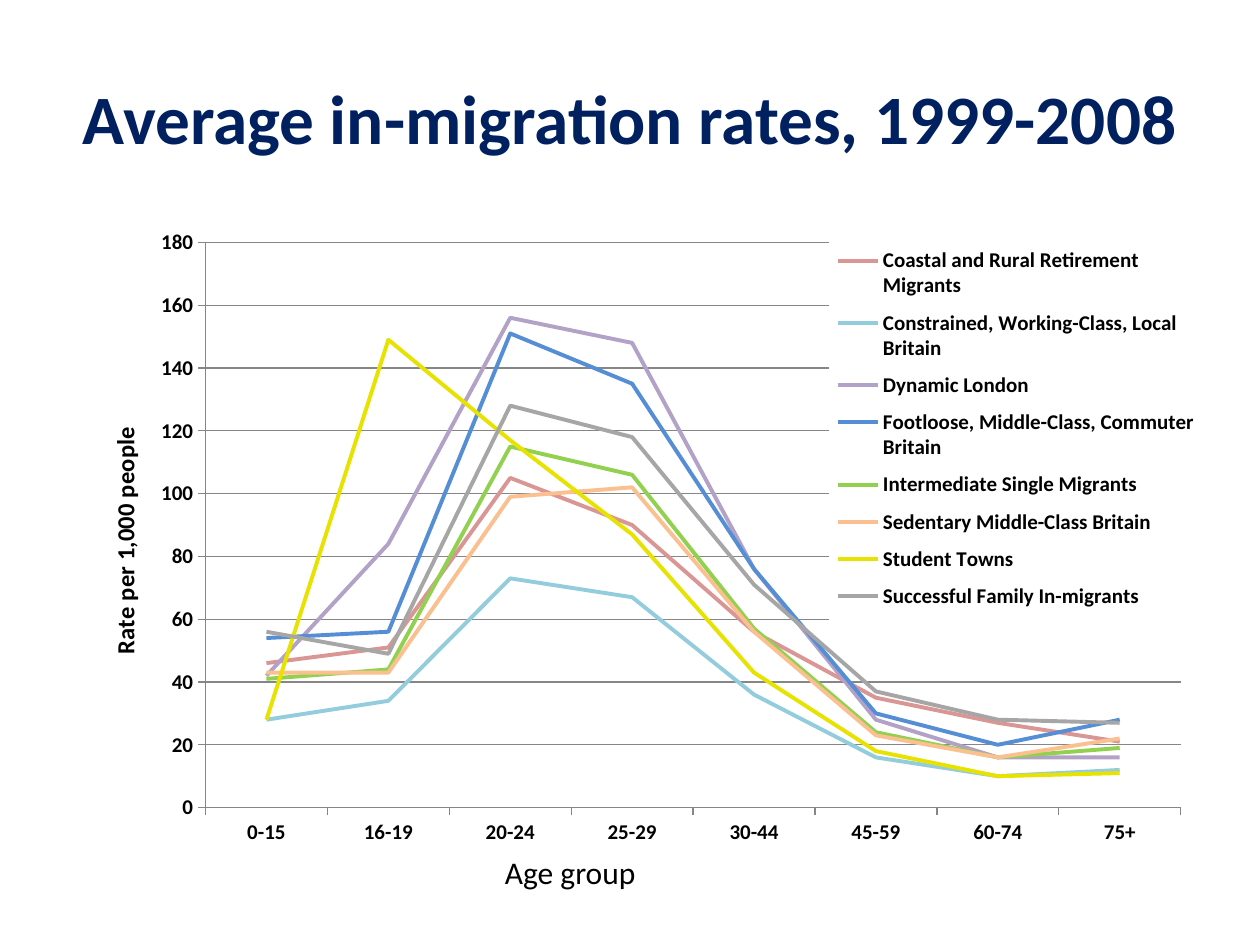
"""Build a slide with a line chart of in-migration rates by age group."""
from dataclasses import dataclass

from lxml import etree
from pptx import Presentation
from pptx.chart.data import CategoryChartData
from pptx.dml.color import RGBColor
from pptx.enum import chart as ch, text as tx
from pptx.oxml import parse_xml
from pptx.oxml.ns import nsdecls, qn
from pptx.util import Cm, Pt

AGES = ["0-15", "16-19", "20-24", "25-29", "30-44", "45-59", "60-74", "75+"]
GROUPS = [
    ("Coastal and Rural Retirement Migrants", "D99694", (46, 51, 105, 90, 56, 35, 27, 21)),
    ("Constrained, Working-Class, Local Britain", "93CDDD", (28, 34, 73, 67, 36, 16, 10, 12)),
    ("Dynamic London", "B3A2C7", (42, 84, 156, 148, 76, 28, 16, 16)),
    ("Footloose, Middle-Class, Commuter Britain", "558ED5", (54, 56, 151, 135, 76, 30, 20, 28)),
    ("Intermediate Single Migrants", "92D050", (41, 44, 115, 106, 57, 24, 16, 19)),
    ("Sedentary Middle-Class Britain", "FAC090", (43, 43, 99, 102, 56, 23, 16, 22)),
    ("Student Towns", "E7E200", (28, 149, 117, 87, 43, 18, 10, 11)),
    ("Successful Family In-migrants", "A6A6A6", (56, 49, 128, 118, 71, 37, 28, 27)),
]


@dataclass(frozen=True)
class Theme:
    """Colours, font and type sizes of the slide."""
    face: str = "Calibri"
    navy: str = "002060"
    ink: str = "000000"
    grid: str = "868686"
    paper: str = "FFFFFF"
    head: float = 39.6
    note: float = 18
    axis: float = 14
    label: float = 12
    stroke: float = 2.25


class Page:
    """Hold the theme and the current slide, and draw on it."""

    def __init__(self, deck, theme):
        """Add a title-only slide to the deck."""
        self.theme = theme
        self.slide = deck.slides.add_slide(deck.slide_layouts[5])

    def style(self, font, size, color, bold=False):
        """Set face, size, colour and weight of a font."""
        font.name, font.size, font.bold = self.theme.face, Pt(size), bold
        font.color.rgb = RGBColor.from_string(color)

    def run(self, para, words, size, color, bold=False):
        """Add one styled run to a paragraph."""
        part = para.add_run()
        part.text = words
        self.style(part.font, size, color, bold)

    def title(self, words, box):
        """Place and fill the title."""
        shape = self.slide.shapes.title
        shape.left, shape.top, shape.width, shape.height = map(Cm, box)
        frame = shape.text_frame
        frame.vertical_anchor = tx.MSO_ANCHOR.MIDDLE
        para = frame.paragraphs[0]
        para.alignment = tx.PP_ALIGN.CENTER
        self.run(para, words, self.theme.head, self.theme.navy, True)

    def label(self, words, box):
        """Add a text box that does not wrap."""
        frame = self.slide.shapes.add_textbox(*map(Cm, box)).text_frame
        frame.word_wrap = False
        frame.auto_size = tx.MSO_AUTO_SIZE.SHAPE_TO_FIT_TEXT
        self.run(frame.paragraphs[0], words, self.theme.note, self.theme.ink)

    def place(self, node, index, inner=False, **spots):
        """Give a chart part a manual layout in shares of the chart."""
        for old in node.findall(qn("c:layout")):
            node.remove(old)
        layout = parse_xml(f"<c:layout {nsdecls('c')}><c:manualLayout/></c:layout>")
        names = [("layoutTarget", "inner")] if inner else []
        names += [("xMode", "edge"), ("yMode", "edge"), *spots.items()]
        for name, val in names:
            etree.SubElement(layout[0], qn("c:" + name)).set("val", str(val))
        node.insert(index, layout)

    def rule(self, line, color, width=0.75):
        """Set colour and width of a line."""
        line.color.rgb = RGBColor.from_string(color)
        line.width = Pt(width)

    def legend(self, chart):
        """Lay an opaque legend over the plot."""
        chart.has_legend = True
        key = chart.legend
        key.position = ch.XL_LEGEND_POSITION.RIGHT
        key.include_in_layout = True
        node = key._element
        self.place(node, 1, x=0.67, y=0.03, w=0.33, h=0.6)
        node.find(qn("c:overlay")).addnext(parse_xml(
            f"<c:spPr {nsdecls('c', 'a')}><a:solidFill>"
            f'<a:srgbClr val="{self.theme.paper}"/></a:solidFill></c:spPr>'))
        self.style(key.font, self.theme.label, self.theme.ink, True)

    def lines(self, cats, groups, name, box):
        """Add a line chart with one line per group."""
        look = self.theme
        data = CategoryChartData(number_format="0")
        data.categories = cats
        for group, _, vals in groups:
            data.add_series(group, vals)
        chart = self.slide.shapes.add_chart(
            ch.XL_CHART_TYPE.LINE, *map(Cm, box), data).chart
        chart.has_title = False
        self.style(chart.font, look.label, look.ink, True)
        chart.plots[0].vary_by_categories = False
        for line, (_, color, _) in zip(chart.plots[0].series, groups):
            line.smooth = False
            line.marker.style = ch.XL_MARKER_STYLE.NONE
            self.rule(line.format.line, color, look.stroke)
        for axis in (chart.category_axis, chart.value_axis):
            axis.major_tick_mark = ch.XL_TICK_MARK.OUTSIDE
            self.rule(axis.format.line, look.grid)
        axis = chart.value_axis
        axis.minimum_scale, axis.maximum_scale, axis.major_unit = 0, 180, 20
        axis.tick_labels.number_format = "0"
        axis.tick_labels.number_format_is_linked = False
        self.rule(axis.major_gridlines.format.line, look.grid)
        para = axis.axis_title.text_frame.paragraphs[0]
        self.run(para, name, look.axis, look.ink, True)
        self.place(axis.axis_title._element, 1, x=0.03, y=0.32)
        area = chart._chartSpace.chart.plotArea
        self.place(area, 0, inner=True, x=0.12, y=0.04, w=0.86, h=0.88)
        self.legend(chart)


def main():
    """Build and save the slide."""
    deck = Presentation()
    deck.slide_width, deck.slide_height = Cm(25.4), Cm(19.05)
    page = Page(deck, Theme())
    page.title("Average in-migration rates, 1999-2008", (1.27, 0.76, 22.86, 3.18))
    page.lines(AGES, GROUPS, "Rate per 1,000 people", (1.4, 4.37, 22.86, 12.95))
    page.label("Age group", (9.93, 17.07, 3.18, 1.02))
    deck.save("out.pptx")


if __name__ == "__main__":
    main()
